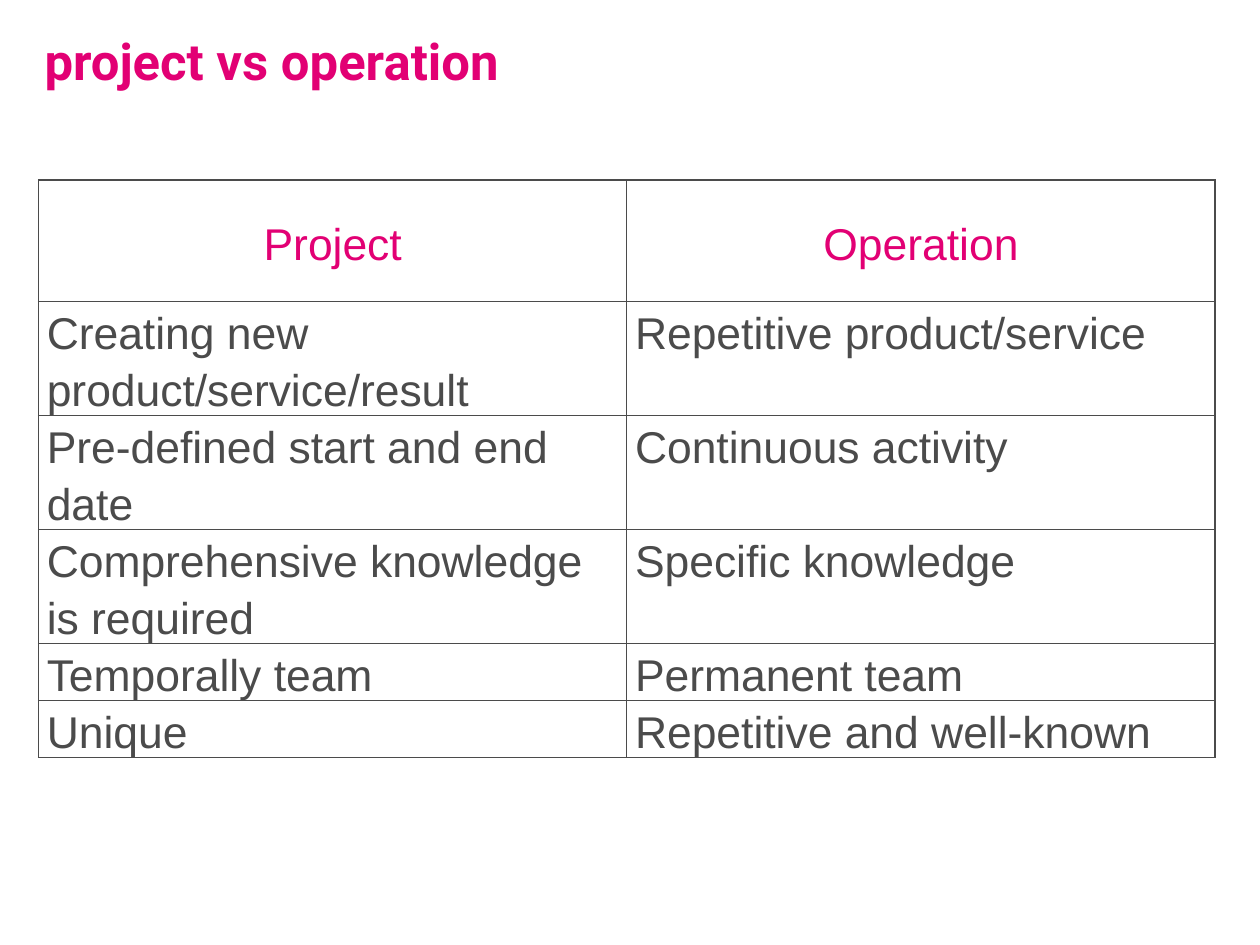
from dataclasses import dataclass

from lxml import etree
from pptx import Presentation
from pptx.dml.color import RGBColor
from pptx.enum.text import MSO_ANCHOR, PP_ALIGN
from pptx.oxml.ns import qn
from pptx.slide import Slide
from pptx.table import _Cell
from pptx.text.text import TextFrame
from pptx.util import Pt

LEFT, CENTER = PP_ALIGN.LEFT, PP_ALIGN.CENTER
TOP, MIDDLE = MSO_ANCHOR.TOP, MSO_ANCHOR.MIDDLE
COLORS = {"accent": "E20074", "text": "4B4B4B", "paper": "FFFFFF"}
COLUMN_WIDTH = 370.6


@dataclass(frozen=True)
class TextStyle:
    font: str
    size: float
    color: str
    spacing: float
    align: PP_ALIGN = LEFT
    anchor: MSO_ANCHOR = TOP
    bold: bool = False


@dataclass(frozen=True)
class ComparisonRow:
    project: str
    operation: str
    height: float
    style: TextStyle


TITLE = TextStyle("Roboto", 32, "accent", 0.9, bold=True)
HEADER = TextStyle("Arial", 28, "accent", 1.15, CENTER, MIDDLE)
BODY = TextStyle("Arial", 28, "text", 1.15)

ROWS = [
    ComparisonRow("Project", "Operation", 76.7, HEADER),
    ComparisonRow("Creating new product/service/result", "Repetitive product/service", 71.5, BODY),
    ComparisonRow("Pre-defined start and end date", "Continuous activity", 71.5, BODY),
    ComparisonRow("Comprehensive knowledge is required", "Specific knowledge", 71.5, BODY),
    ComparisonRow("Temporally team", "Permanent team", 35.5, BODY),
    ComparisonRow("Unique", "Repetitive and well-known", 35.5, BODY),
]


def write_text(frame: TextFrame, text: str, style: TextStyle) -> None:
    """Write one styled run into the first paragraph of a frame."""
    para = frame.paragraphs[0]
    para.alignment = style.align
    para.line_spacing = style.spacing
    para.space_before = Pt(0)
    span = para.add_run()
    span.text = text
    span.font.name = style.font
    span.font.size = Pt(style.size)
    span.font.bold = style.bold
    span.font.color.rgb = RGBColor.from_string(COLORS[style.color])


def add_borders(cell: _Cell, color: str, width: float) -> None:
    """Draw a solid line on all four sides of a cell."""
    properties = cell._tc.get_or_add_tcPr()
    for index, side in enumerate(("lnL", "lnR", "lnT", "lnB")):
        line = etree.Element(qn(f"a:{side}"), w=str(Pt(width)))
        fill = etree.SubElement(line, qn("a:solidFill"))
        etree.SubElement(fill, qn("a:srgbClr"), val=COLORS[color])
        properties.insert(index, line)


def format_cell(cell: _Cell, text: str, style: TextStyle) -> None:
    """Fill, border and write one table cell."""
    cell.margin_left = cell.margin_right = Pt(5.2)
    cell.margin_top = cell.margin_bottom = Pt(0)
    cell.vertical_anchor = style.anchor
    cell.fill.solid()
    cell.fill.fore_color.rgb = RGBColor.from_string(COLORS["paper"])
    add_borders(cell, "text", 1)
    write_text(cell.text_frame, text, style)


def add_title(page: Slide, text: str) -> None:
    """Place and format the title placeholder."""
    box = page.shapes.title
    box.left, box.top, box.width, box.height = Pt(28.1), Pt(23), Pt(737.3), Pt(46)
    frame = box.text_frame
    frame.margin_left = frame.margin_right = Pt(0)
    frame.margin_top = frame.margin_bottom = Pt(0)
    frame.vertical_anchor = TITLE.anchor
    frame.word_wrap = True
    write_text(frame, text, TITLE)


def add_comparison(page: Slide, rows: list[ComparisonRow]) -> None:
    """Add the two-column comparison table."""
    height = sum(row.height for row in rows)
    table = page.shapes.add_table(
        len(rows), 2, Pt(24.3), Pt(113.4), Pt(2 * COLUMN_WIDTH), Pt(height)
    ).table
    table.first_row = table.horz_banding = False
    for column in table.columns:
        column.width = Pt(COLUMN_WIDTH)
    for index, row in enumerate(rows):
        table.rows[index].height = Pt(row.height)
        for column, text in enumerate((row.project, row.operation)):
            format_cell(table.cell(index, column), text, row.style)


def main() -> None:
    """Build and save the slide."""
    deck = Presentation()
    deck.slide_width, deck.slide_height = Pt(793.75), Pt(595.25)
    page = deck.slides.add_slide(deck.slide_layouts[5])
    add_title(page, "project vs operation")
    add_comparison(page, ROWS)
    deck.save("out.pptx")


if __name__ == "__main__":
    main()
